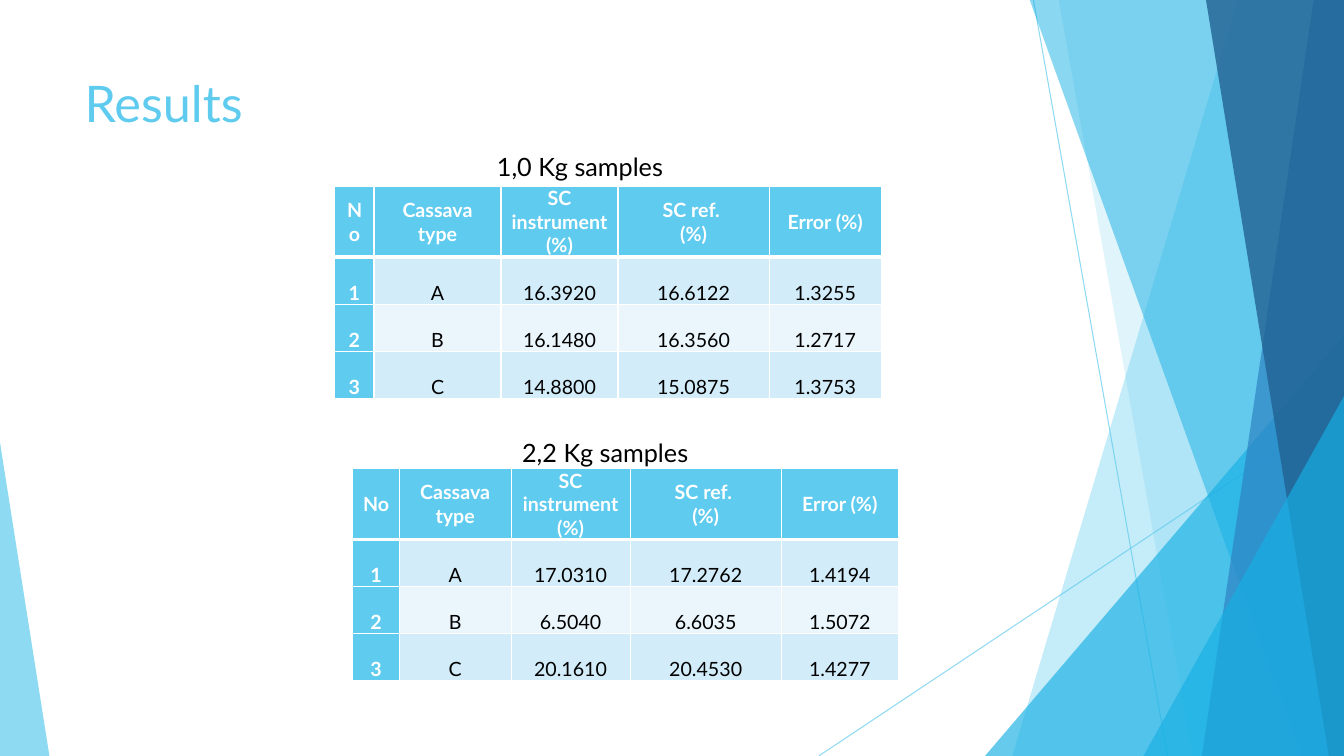
from lxml.etree import SubElement
from pptx import Presentation
from pptx.dml.color import RGBColor
from pptx.enum.shapes import MSO_CONNECTOR, MSO_SHAPE
from pptx.enum.text import MSO_ANCHOR, MSO_AUTO_SIZE, PP_ALIGN
from pptx.oxml.ns import qn
from pptx.util import Inches, Pt

FONT = "Lato"
WIDTH, HEIGHT = 13.33, 7.5
BAND_TOP = -0.01
COLORS = {
    "sky": "5FCBEF", "cyan": "17B0E4", "blue": "2E83C3", "navy": "226292",
    "white": "FFFFFF", "black": "000000", "odd": "D2ECF9", "even": "EAF6FC",
}

RAYS = [((10.25, 0), (11.58, HEIGHT)), ((WIDTH, 4.03), (8.12, HEIGHT))]
FACETS = [
    ("band", (12.28, 10.04), "sky", 36),
    ("band", (10.5, 11.83), "sky", 20),
    ("triangle", (9.77, 3.33, 3.56, 1), "cyan", 66),
    ("band", (10.21, 12.91), "cyan", 50),
    ("band", (13.03, 11.92), "blue", 70),
    ("band", (11.96, 13.18), "navy", 80),
    ("triangle", (11.34, 3.93, 1.99, 1), "cyan", 66),
    ("triangle", (0, 4.39, 0.49, 0), "sky", 70),
]

HEADERS = ["No", "Cassava type", "SC instrument (%)", "SC ref. \n(%)", "Error (%)"]
ROW_HEIGHTS = [0.7, 0.46, 0.46, 0.46]
SAMPLES = [
    {
        "caption": "1,0 Kg samples", "caption_at": (4.83, 1.45), "table_at": (3.32, 1.85),
        "cols": [0.39, 1.26, 1.16, 1.5, 1.11],
        "rows": [
            ["1", "A", "16.3920", "16.6122", "1.3255"],
            ["2", "B", "16.1480", "16.3560", "1.2717"],
            ["3", "C", "14.8800", "15.0875", "1.3753"],
        ],
    },
    {
        "caption": "2,2 Kg samples", "caption_at": (5.08, 4.29), "table_at": (3.5, 4.65),
        "cols": [0.46, 1.11, 1.18, 1.5, 1.16],
        "rows": [
            ["1", "A", "17.0310", "17.2762", "1.4194"],
            ["2", "B", "6.5040", "6.6035", "1.5072"],
            ["3", "C", "20.1610", "20.4530", "1.4277"],
        ],
    },
]


def rgb(name):
    return RGBColor.from_string(COLORS[name])


def set_all(obj, values):
    for name, value in values.items():
        setattr(obj, name, value)


def paint(fill, color, alpha):
    fill.solid()
    fill.fore_color.rgb = rgb(color)
    clr = fill._xPr.find(".//" + qn("a:srgbClr"))
    SubElement(clr, qn("a:alpha"), val=str(alpha * 1000))


def style_font(font, size, color, bold=False):
    set_all(font, {"name": FONT, "size": Pt(size), "bold": bold})
    font.color.rgb = rgb(color)


def add_ray(s, start, end):
    x1, y1, x2, y2 = (Inches(v) for v in start + end)
    ray = s.shapes.add_connector(MSO_CONNECTOR.STRAIGHT, x1, y1, x2, y2)
    ray.line.width = Pt(0.75)
    paint(ray.line.fill, "sky", 70)
    SubElement(ray._element.spPr, qn("a:effectLst"))


def add_facet(s, kind, place, color, alpha):
    if kind == "band":
        top_x, bottom_x = place
        corners = [(WIDTH, BAND_TOP), (WIDTH, HEIGHT), (bottom_x, HEIGHT)]
        outline = s.shapes.build_freeform(Inches(top_x), Inches(BAND_TOP))
        outline.add_line_segments([(Inches(x), Inches(y)) for x, y in corners])
        sp = outline.convert_to_shape()
    else:
        x, y, w, apex = place
        box = (Inches(v) for v in (x, y, w, HEIGHT - y))
        sp = s.shapes.add_shape(MSO_SHAPE.ISOSCELES_TRIANGLE, *box)
        sp.adjustments[0] = apex
    sp.shadow.inherit = False
    sp.line.fill.background()
    paint(sp.fill, color, alpha)


def add_text(s, text, box, size, color, wrap):
    tf = s.shapes.add_textbox(*(Inches(v) for v in box)).text_frame
    tf.word_wrap = wrap
    tf.auto_size = MSO_AUTO_SIZE.NONE if wrap else MSO_AUTO_SIZE.SHAPE_TO_FIT_TEXT
    r = tf.paragraphs[0].add_run()
    r.text = text
    style_font(r.font, size, color)


def add_borders(cell, widths):
    tcPr = cell._tc.get_or_add_tcPr()
    for side, width in zip("LRTB", widths):
        ln = SubElement(tcPr, qn("a:ln" + side), w=str(Pt(width)))
        fill = SubElement(ln, qn("a:solidFill"))
        SubElement(fill, qn("a:srgbClr"), val=COLORS["white"])


def style_cell(cell, text, row, col):
    header = row == 0
    label = header or col == 0
    cell.text = text
    set_all(cell, {
        "margin_left": Inches(0.07), "margin_right": Inches(0.07),
        "margin_top": 0, "margin_bottom": 0,
        "vertical_anchor": MSO_ANCHOR.MIDDLE if header else MSO_ANCHOR.BOTTOM,
    })
    add_borders(cell, (1, 1, 3 if row == 1 else 1, 3 if header else 1))
    cell.fill.solid()
    cell.fill.fore_color.rgb = rgb("sky" if label else "odd" if row % 2 else "even")
    for p in cell.text_frame.paragraphs:
        set_all(p, {"alignment": PP_ALIGN.CENTER, "line_spacing": 1.0 if header else 2.0})
        for r in p.runs:
            style_font(r.font, 14, "white" if label else "black", label)


def add_results(s, sample):
    rows = [HEADERS] + sample["rows"]
    box = (*sample["table_at"], sum(sample["cols"]), sum(ROW_HEIGHTS))
    table = s.shapes.add_table(len(rows), len(HEADERS), *(Inches(v) for v in box)).table
    set_all(table, {"first_row": True, "first_col": True, "horz_banding": False})
    for column, width in zip(table.columns, sample["cols"]):
        column.width = Inches(width)
    for i, (values, height) in enumerate(zip(rows, ROW_HEIGHTS)):
        table.rows[i].height = Inches(height)
        for j, text in enumerate(values):
            style_cell(table.cell(i, j), text, i, j)


def main():
    prs = Presentation()
    set_all(prs, {"slide_width": Inches(WIDTH), "slide_height": Inches(HEIGHT)})
    s = prs.slides.add_slide(prs.slide_layouts[6])
    for start, end in RAYS:
        add_ray(s, start, end)
    for facet in FACETS:
        add_facet(s, *facet)
    add_text(s, "Results", (0.74, 0.67, 9.4, 1.44), 36, "sky", True)
    for sample in SAMPLES:
        add_results(s, sample)
    for sample in SAMPLES:
        add_text(s, sample["caption"], (*sample["caption_at"], 1.88, 0.4), 18, "black", False)
    prs.save("out.pptx")


if __name__ == "__main__":
    main()
